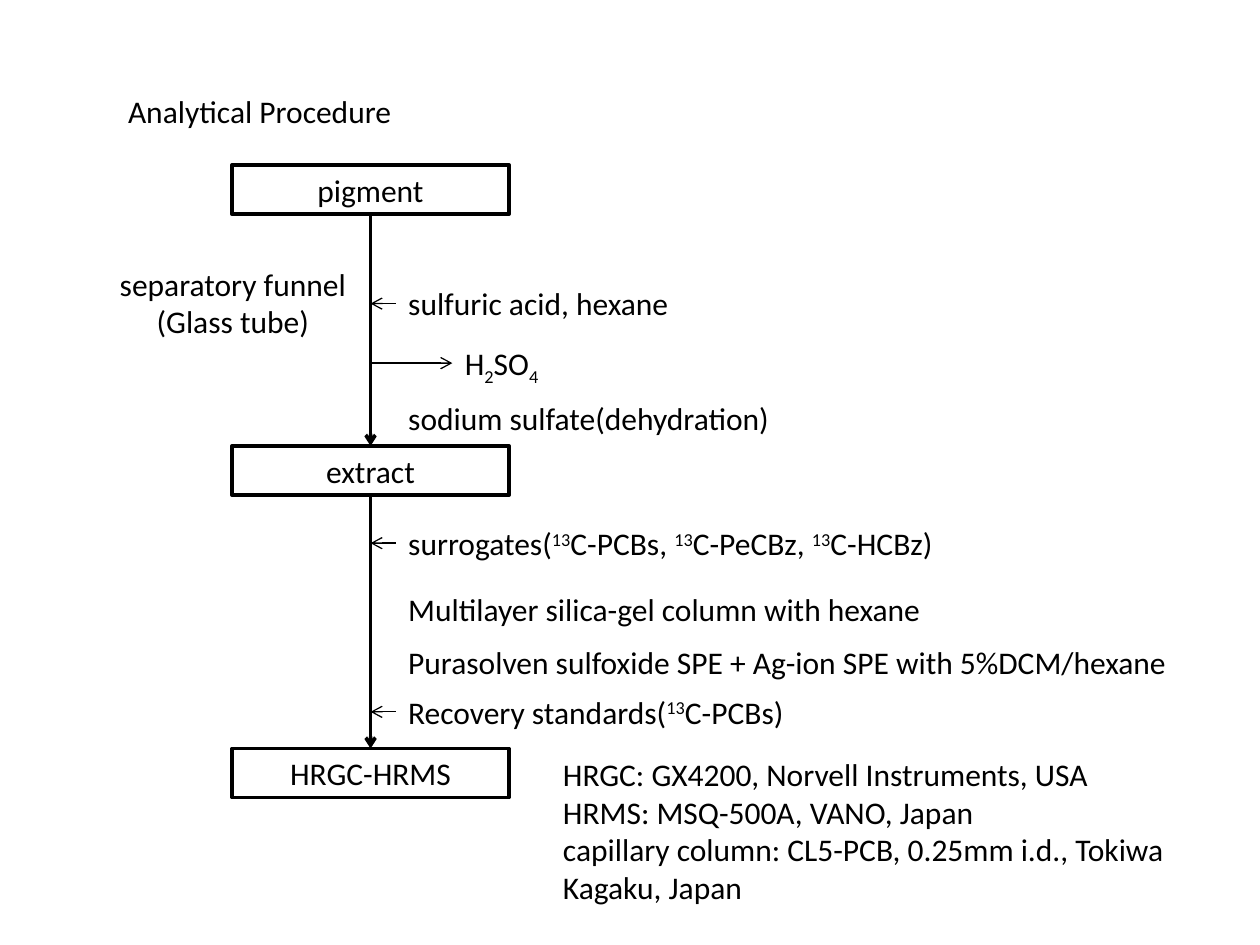
from lxml.etree import SubElement
from pptx import Presentation
from pptx.dml.color import RGBColor
from pptx.enum.shapes import MSO_CONNECTOR, MSO_SHAPE
from pptx.enum.text import MSO_ANCHOR, PP_ALIGN
from pptx.oxml.ns import qn
from pptx.util import Cm, Pt

BLACK = RGBColor(0, 0, 0)
FONT = "Calibri"
SUB, SUPER = -25000, 30000

TITLE = "Analytical Procedure"
STAGES = [("pigment", 3.33), ("extract", 8.99), ("HRGC-HRMS", 15.09)]
APPARATUS = ["separatory funnel", "(Glass tube)"]
INSTRUMENTS = [
    "HRGC: GX4200, Norvell Instruments, USA",
    "HRMS: MSQ-500A, VANO, Japan",
    "capillary column: CL5-PCB, 0.25mm i.d., Tokiwa Kagaku, Japan",
]
# Runs (plain text or text with baseline), middle height, width, arrow direction
STEPS = [
    (["sulfuric acid, hexane"], 6.12, 5.82, "in"),
    (["H", ("2", SUB), "SO", ("4", SUB)], 7.32, 2.06, "out"),
    (["sodium sulfate(dehydration)"], 8.43, 7.87, None),
    (["surrogates(", ("13", SUPER), "C-PCBs, ", ("13", SUPER), "C-PeCBz, ",
      ("13", SUPER), "C-HCBz)"], 10.95, 11.38, "in"),
    (["Multilayer silica-gel column with hexane"], 12.27, 10.97, None),
    (["Purasolven sulfoxide SPE + Ag-ion SPE with 5%DCM/hexane"], 13.34, 16.4, None),
    (["Recovery standards(", ("13", SUPER), "C-PCBs)"], 14.35, 8.2, "in"),
]

AXIS_X = 7.47
STAGE_WIDTH, STAGE_HEIGHT = 5.59, 0.99
LINE_HEIGHT = 1.02
STEP_X, OUTLET_X = 7.98, 9.12


def format_text(frame, align):
    frame.word_wrap = True
    for paragraph in frame.paragraphs:
        paragraph.alignment = align
        for run in paragraph.runs:
            run.font.name = FONT
            run.font.size = Pt(18)
            run.font.color.rgb = BLACK


def add_text(slide, lines, left, top, width, height, align=PP_ALIGN.LEFT):
    """Add a text box; each line is a list of strings or (string, baseline)."""
    box = slide.shapes.add_textbox(Cm(left), Cm(top), Cm(width), Cm(height))
    frame = box.text_frame
    for index, line in enumerate(lines):
        paragraph = frame.add_paragraph() if index else frame.paragraphs[0]
        for part in line:
            text, baseline = (part, 0) if isinstance(part, str) else part
            run = paragraph.add_run()
            run.text = text
            if baseline:
                run.font._element.set("baseline", str(baseline))
    format_text(frame, align)


def add_stage(slide, label, top):
    stage = slide.shapes.add_shape(
        MSO_SHAPE.RECTANGLE, Cm(AXIS_X - STAGE_WIDTH / 2), Cm(top),
        Cm(STAGE_WIDTH), Cm(STAGE_HEIGHT))
    stage.shadow.inherit = False
    stage.fill.background()
    stage.line.color.rgb = BLACK
    stage.line.width = Pt(2)
    stage.text_frame.text = label
    stage.text_frame.vertical_anchor = MSO_ANCHOR.MIDDLE
    format_text(stage.text_frame, PP_ALIGN.CENTER)
    return stage


def add_arrow(slide, start_x, end_x, y, weight):
    arrow = slide.shapes.add_connector(
        MSO_CONNECTOR.STRAIGHT, Cm(start_x), Cm(y), Cm(end_x), Cm(y))
    arrow.line.color.rgb = BLACK
    arrow.line.width = Pt(weight)
    SubElement(arrow.line._get_or_add_ln(), qn("a:tailEnd"), type="arrow")
    SubElement(arrow._element.spPr, qn("a:effectLst"))
    return arrow


def main():
    deck = Presentation()
    deck.slide_width, deck.slide_height = Cm(25.4), Cm(19.05)
    slide = deck.slides.add_slide(deck.slide_layouts[5])

    title = slide.shapes.title
    title.left, title.top, title.width, title.height = Cm(2.02), Cm(1.73), Cm(6.43), Cm(LINE_HEIGHT)
    title.text_frame.text = TITLE
    title.text_frame.vertical_anchor = MSO_ANCHOR.TOP
    format_text(title.text_frame, PP_ALIGN.CENTER)

    stages = [add_stage(slide, label, top) for label, top in STAGES]
    for upper, lower in zip(stages, stages[1:]):
        flow = add_arrow(slide, AXIS_X, AXIS_X, 0, 2)
        flow.begin_connect(upper, 2)
        flow.end_connect(lower, 0)

    for runs, middle, width, direction in STEPS:
        left = OUTLET_X if direction == "out" else STEP_X
        add_text(slide, [runs], left, middle - LINE_HEIGHT / 2, width, LINE_HEIGHT)
        if direction == "in":
            add_arrow(slide, left, AXIS_X, middle, 0.75)
        elif direction == "out":
            add_arrow(slide, AXIS_X, left, middle, 0.75)

    add_text(slide, [[line] for line in APPARATUS], 2.03, 5.21, 5.33, 1.8, PP_ALIGN.CENTER)
    add_text(slide, [[line] for line in INSTRUMENTS], 11.1, 15.09, 12.7, 3.33)
    deck.save("out.pptx")


if __name__ == "__main__":
    main()
